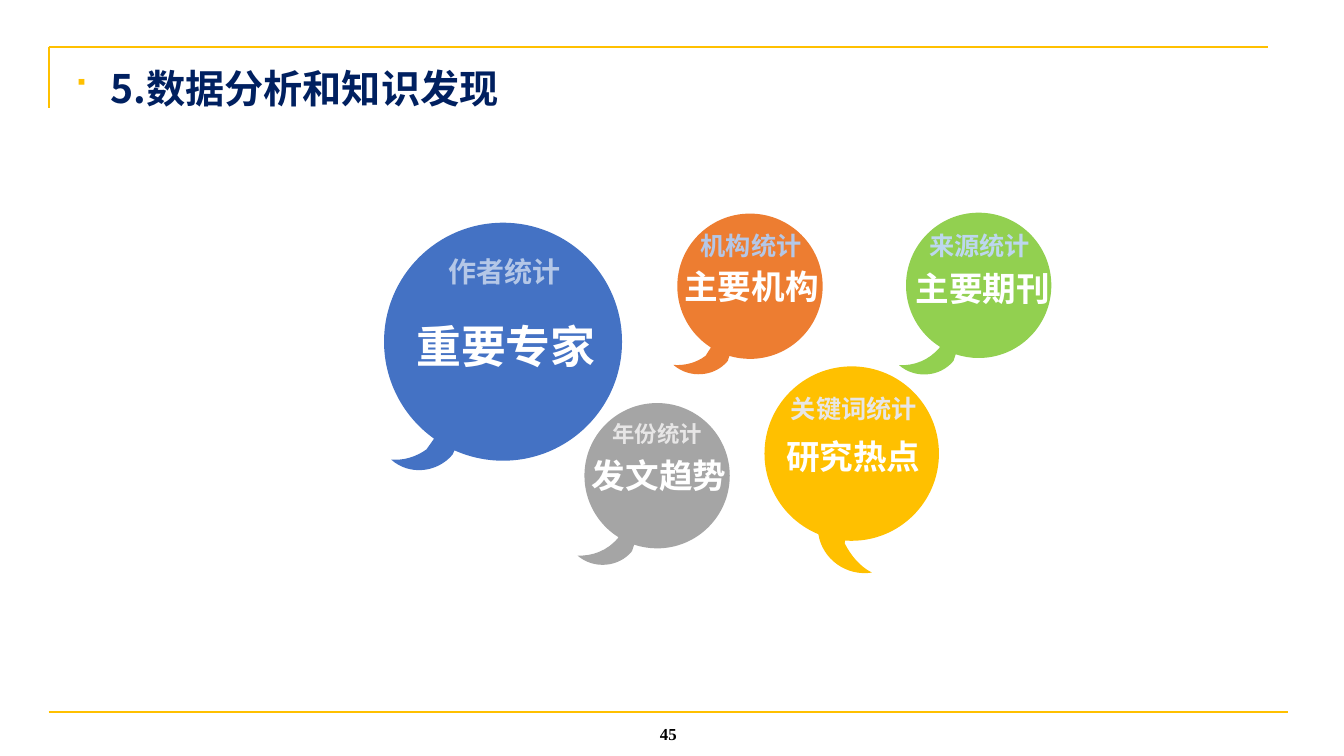
from dataclasses import dataclass
from math import atan2, cos, pi, sin, tan

from pptx import Presentation
from pptx.dml.color import RGBColor
from pptx.enum.shapes import MSO_CONNECTOR as Connector
from pptx.enum.text import MSO_ANCHOR as Anchor, MSO_AUTO_SIZE as AutoSize, PP_ALIGN as Align
from pptx.oxml.ns import qn
from pptx.util import Pt
from lxml.etree import SubElement

CJK = "Noto Sans CJK SC"
GOLD = "FFC000"
WHITE = "FFFFFF"


@dataclass
class Bubble:
    center: tuple
    radius: float
    tail: list
    fill: str
    caption: str
    caption_size: float
    caption_color: str
    caption_offset: tuple
    heading: str
    heading_size: float
    heading_offset: tuple


LARGE_TAIL = [(-36, 80.6), (-46.8, 93.6), (-67, 95.8), (-79.9, 84.2),
              (-70.6, 85), (-61.9, 82.1), (-54.7, 77)]
WIDE_TAIL = [(-15.8, 53.3), (-25.2, 64.8), (-43.2, 66.2), (-54.7, 56.2),
             (-46.8, 56.9), (-38.2, 54.7), (-31.7, 49.7)]
SMALL_TAIL = [(-18, 54), (-27.4, 65.5), (-45.4, 67), (-56.9, 57),
              (-46, 57.6), (-35.3, 53.3), (-28, 44.6)]
RIGHT_TAIL = [(-5, 64.1), (-0.7, 72.7), (5.8, 80.6), (14.4, 85),
              (-3.6, 87.8), (-20.9, 75.6), (-23.8, 57.6)]

BUBBLES = [
    Bubble((359.3, 244.1), 85, LARGE_TAIL, "4472C4",
           "作者统计", 20, "B4C7E7", (1, -62.6), "重要专家", 32, (2.2, -16.2)),
    Bubble((535.7, 204.5), 51.9, WIDE_TAIL, "ED7D31",
           "机构统计", 18, "B4C7E7", (0.8, -40), "主要机构", 24, (1.1, -14.4)),
    Bubble((469.4, 339.8), 51.9, SMALL_TAIL, "A5A5A5",
           "年份统计", 16, "E7E6E6", (0.1, -39.6), "发文趋势", 24, (1.4, -15.1)),
    Bubble((608.4, 324), 62.3, RIGHT_TAIL, GOLD,
           "关键词统计", 18, "E7E6E6", (1.5, -43.2), "研究热点", 24, (1.1, -12.6)),
    Bubble((699.1, 203.8), 51.9, SMALL_TAIL, "92D050",
           "来源统计", 18, "BDD7EE", (0.7, -39.6), "主要期刊", 24, (2.9, -12.3)),
]


def color(value):
    return RGBColor.from_string(value)


def add_run(paragraph, text, size, value, face=CJK):
    run = paragraph.add_run()
    run.text = text
    run.font.size = Pt(size)
    run.font.bold = True
    run.font.name = face
    run.font.color.rgb = color(value)
    SubElement(run.font._element, qn("a:ea")).set("typeface", face)


def add_label(slide, box, text, size, value, face=CJK, anchor=Anchor.TOP):
    frame = slide.shapes.add_textbox(*map(Pt, box)).text_frame
    frame.word_wrap = True
    frame.vertical_anchor = anchor
    frame.margin_left = frame.margin_right = frame.margin_top = frame.margin_bottom = 0
    frame.paragraphs[0].alignment = Align.CENTER
    add_run(frame.paragraphs[0], text, size, value, face)


def add_rule(slide, *ends):
    rule = slide.shapes.add_connector(Connector.STRAIGHT, *map(Pt, ends))
    rule.line.color.rgb = color(GOLD)
    rule.line.width = Pt(1.5)
    SubElement(rule._element.spPr, qn("a:effectLst"))


def add_frame(slide, left, top, width, height):
    bottom = top + height
    add_rule(slide, left, top, left + width - 14.4, top)
    add_rule(slide, left, bottom, left + width, bottom)
    add_rule(slide, left, top, left, top + 43.5)
    add_label(slide, (369.4, bottom + 1, 216, 28.8), "45", 12, "000000",
              "Times New Roman", Anchor.MIDDLE)


def add_title(slide, left, top, width, height):
    title = slide.shapes.title
    title.left, title.top, title.width, title.height = map(Pt, (left, top, width, height))
    frame = title.text_frame
    frame.auto_size = AutoSize.NONE
    frame.word_wrap = True
    frame.vertical_anchor = Anchor.TOP
    heading = frame.paragraphs[0]
    indents = heading._p.get_or_add_pPr()
    indents.set("marL", str(Pt(27)))
    indents.set("indent", str(-Pt(27)))
    bullet_color = SubElement(indents, qn("a:buClr"))
    SubElement(bullet_color, qn("a:srgbClr")).set("val", GOLD)
    SubElement(indents, qn("a:buFont")).set("typeface", "Wingdings")
    SubElement(indents, qn("a:buChar")).set("char", "■")
    heading.alignment = Align.LEFT
    heading.line_spacing = 1.5
    add_run(heading, "5.数据分析和知识发现", 28, "002060")


def arc_points(radius, start, end):
    pull = 4 / 3 * tan((end - start) / 4)
    return [(radius * (cos(angle) - turn * sin(angle)), radius * (sin(angle) + turn * cos(angle)))
            for angle, turn in ((start, pull), (end, -pull), (end, 0))]


def bubble_outline(radius, tail):
    first = atan2(tail[-1][1], tail[-1][0])
    last = atan2(tail[0][1], tail[0][0]) + 2 * pi
    angles = [first, pi, 1.5 * pi, 2 * pi, 2.5 * pi, last]
    outline = [(radius * cos(first), radius * sin(first))]
    for start, end in zip(angles, angles[1:]):
        outline += arc_points(radius, start, end)
    return outline + tail


def round_segments(balloon, joint):
    segments = list(balloon._element.iter(qn("a:lnTo")))
    curved = segments[:joint] + segments[joint + 1:]
    for first, *pulls in zip(curved[::3], curved[1::3], curved[2::3]):
        curve = first.makeelement(qn("a:cubicBezTo"))
        first.addprevious(curve)
        for segment in (first, *pulls):
            curve.append(segment[0])
            segment.getparent().remove(segment)


def add_bubble(slide, bubble):
    x, y = bubble.center
    outline = [(Pt(x + dx), Pt(y + dy)) for dx, dy in bubble_outline(bubble.radius, bubble.tail)]
    builder = slide.shapes.build_freeform(*outline[0])
    builder.add_line_segments(outline[1:], close=True)
    balloon = builder.convert_to_shape()
    round_segments(balloon, len(outline) - len(bubble.tail) - 1)
    balloon.shadow.inherit = False
    balloon.fill.solid()
    balloon.fill.fore_color.rgb = color(bubble.fill)
    balloon.line.fill.background()
    heading_width = len(bubble.heading) * bubble.heading_size + 5
    for text, size, value, (dx, dy), width in (
        (bubble.caption, bubble.caption_size, bubble.caption_color,
         bubble.caption_offset, 2 * bubble.radius),
        (bubble.heading, bubble.heading_size, WHITE, bubble.heading_offset, heading_width),
    ):
        add_label(slide, (x + dx - width / 2, y + dy, width, size * 1.2), text, size, value)


def main():
    deck = Presentation()
    deck.slide_width, deck.slide_height = Pt(960), Pt(540)
    slide = deck.slides.add_slide(deck.slide_layouts[5])
    add_frame(slide, 34.8, 33.7, 885.2, 475)
    add_title(slide, 44.6, 25.2, 810, 58.3)
    for bubble in BUBBLES:
        add_bubble(slide, bubble)
    deck.save("out.pptx")


if __name__ == "__main__":
    main()
